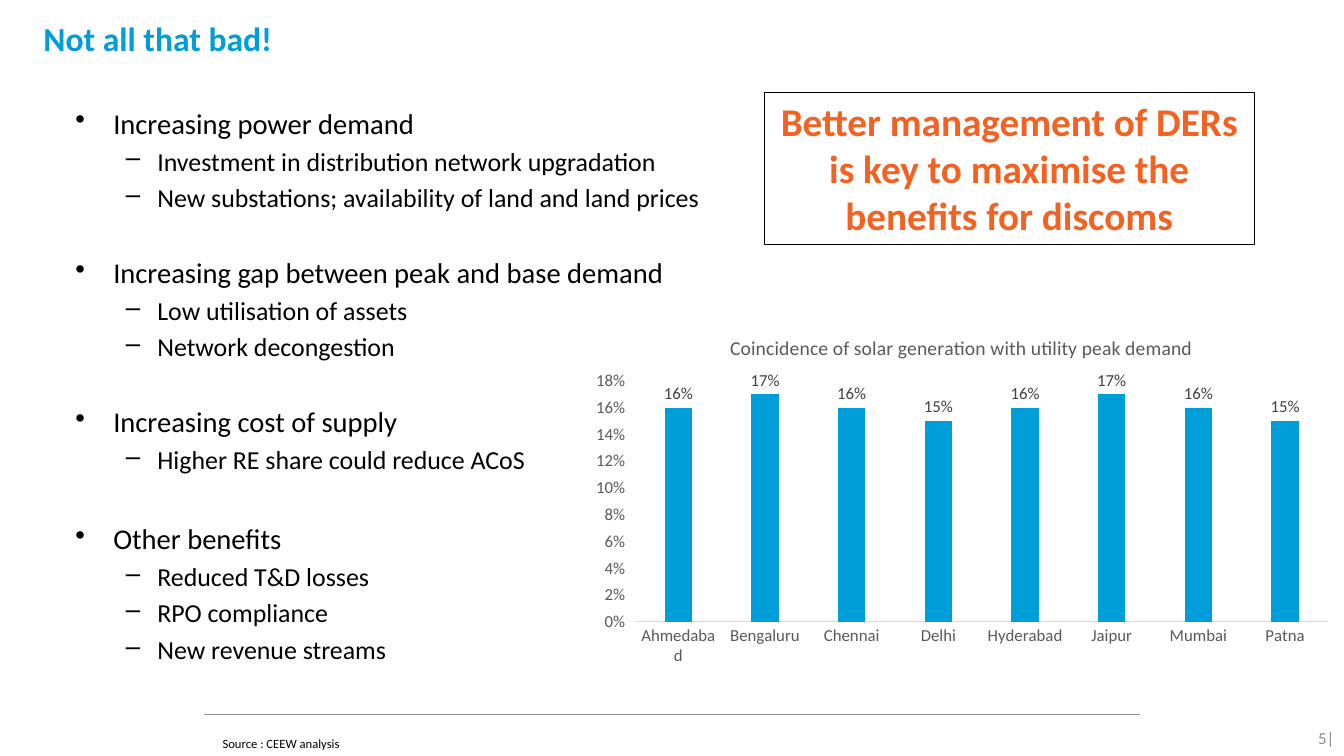
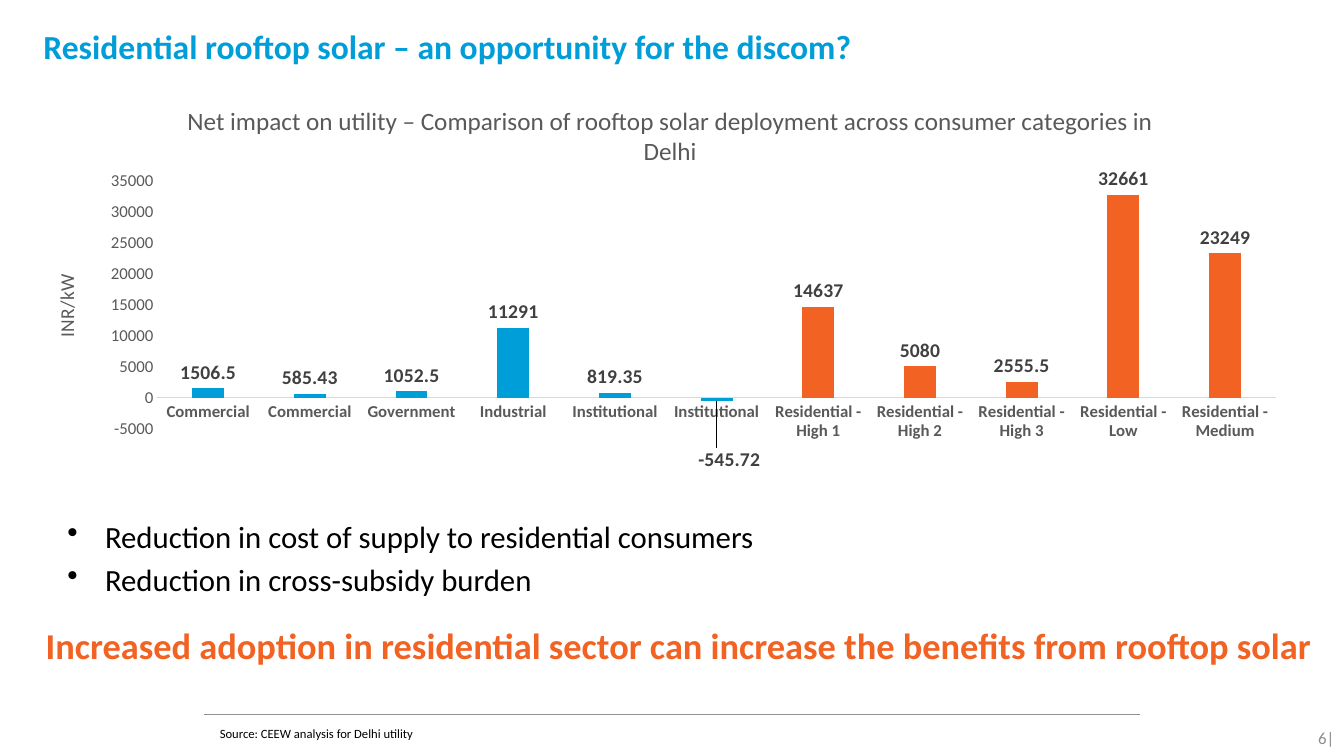
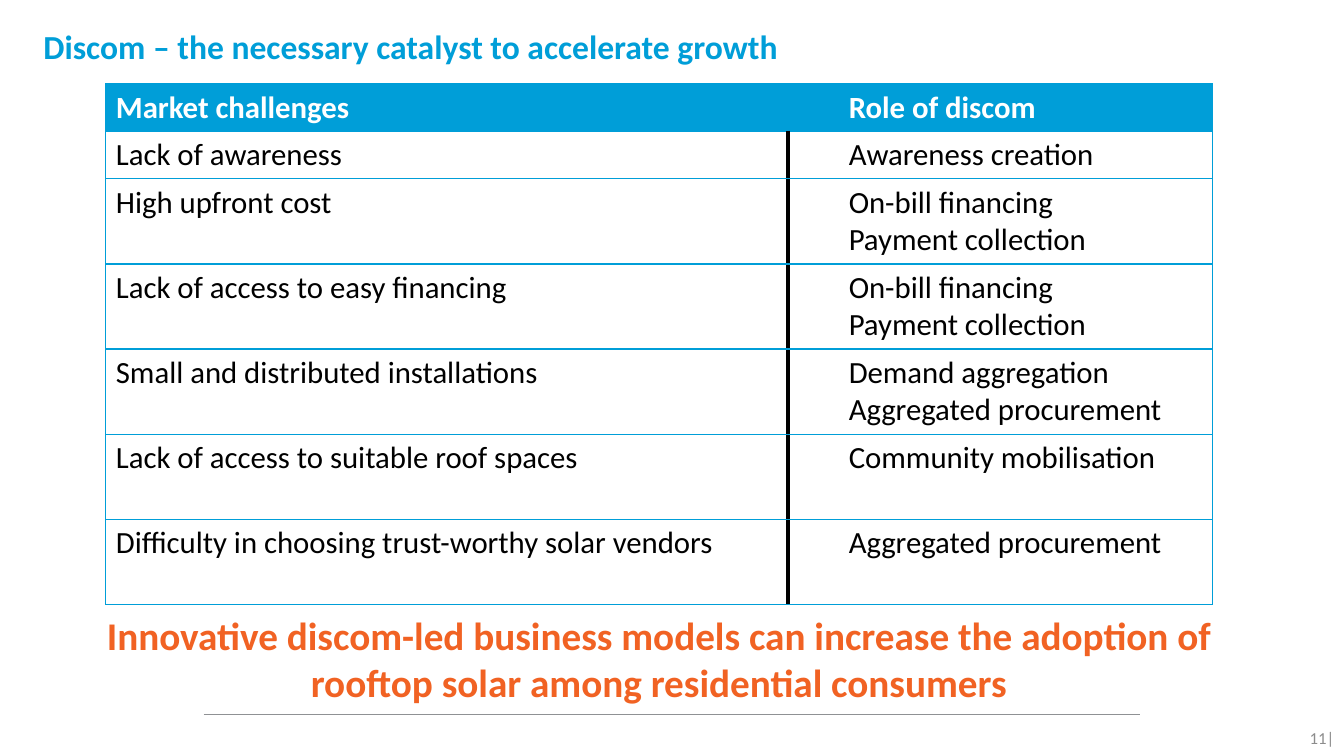
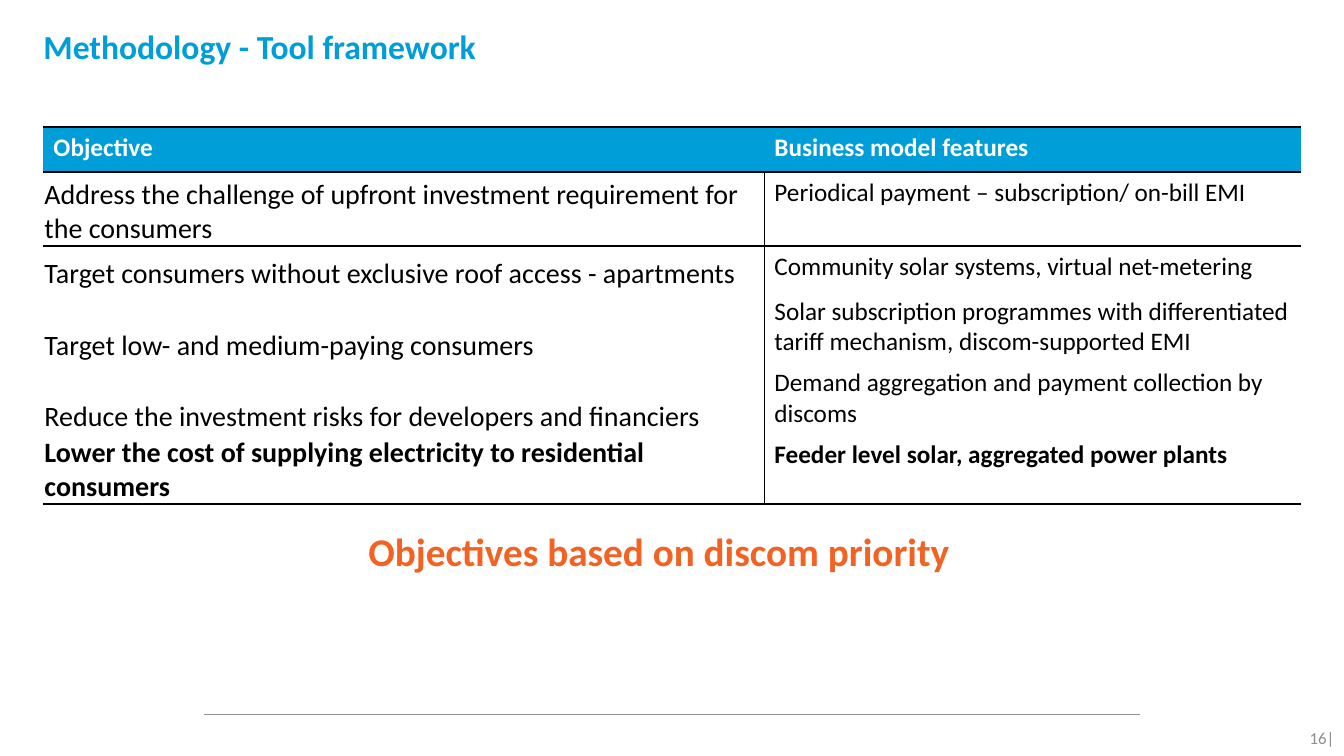
"""Build four slides on rooftop solar and the role of discoms."""
from lxml import etree
from pptx import Presentation
from pptx.chart.data import CategoryChartData
from pptx.dml.color import RGBColor
from pptx.enum.chart import XL_CHART_TYPE as ChartType
from pptx.enum.chart import XL_LABEL_POSITION as LabelPosition
from pptx.enum.chart import XL_TICK_MARK as TickMark
from pptx.enum.shapes import MSO_CONNECTOR as Connector
from pptx.enum.shapes import MSO_SHAPE as Shape
from pptx.enum.text import MSO_ANCHOR as Anchor
from pptx.enum.text import MSO_AUTO_SIZE as AutoSize
from pptx.enum.text import PP_ALIGN as Align
from pptx.oxml.ns import qn
from pptx.util import Pt

BLUE = RGBColor(0x00, 0x9E, 0xD8)
ORANGE = RGBColor(0xF1, 0x62, 0x23)
BLACK = RGBColor(0x00, 0x00, 0x00)
WHITE = RGBColor(0xFF, 0xFF, 0xFF)
RULE_GREY = RGBColor(0x8F, 0x91, 0x94)
PAGE_GREY = RGBColor(0x8C, 0x8C, 0x8C)
AXIS_GREY = RGBColor(0x59, 0x59, 0x59)
LABEL_GREY = RGBColor(0x40, 0x40, 0x40)
AXIS_LINE = RGBColor(0xD9, 0xD9, 0xD9)
FONT = "Calibri"
NO_GRID_STYLE = "{2D5ABB26-0587-4C30-8999-92F81FD0307C}"
DEFAULT_INSETS = (7.2, 3.6, 7.2, 3.6)

BENEFITS = [
    ("Increasing power demand",
     ["Investment in distribution network upgradation",
      "New substations; availability of land and land prices"]),
    ("Increasing gap between peak and base demand",
     ["Low utilisation of assets", "Network decongestion"]),
    ("Increasing cost of supply", ["Higher RE share could reduce ACoS"]),
    ("Other benefits",
     ["Reduced T&D losses", "RPO compliance", "New revenue streams"]),
]
PEAK_CHART = {
    "box": (415.5, 223.2, 544.3, 257),
    "title": "Coincidence of solar generation with utility peak demand",
    "title_size": 14, "title_at": (0.19, 0.05),
    "plot": (0.07, 0.19, 0.91, 0.67),
    "values": [("Ahmedabad", 0.16), ("Bengaluru", 0.17), ("Chennai", 0.16),
               ("Delhi", 0.15), ("Hyderabad", 0.16), ("Jaipur", 0.17),
               ("Mumbai", 0.16), ("Patna", 0.15)],
    "format": "0%", "scale": (0, 0.18, 0.02), "tick": TickMark.OUTSIDE,
    "bold": False, "label_size": 12,
}
IMPACT_CHART = {
    "box": (21.6, 56.9, 908, 280),
    "title": "Net impact on utility – Comparison of rooftop solar deployment "
             "across consumer categories in Delhi",
    "title_size": 18, "title_at": (0.12, 0.05),
    "plot": (0.1, 0.26, 0.88, 0.64),
    "values": [("Commercial", 1506.5), ("Commercial", 585.43),
               ("Government", 1052.5), ("Industrial", 11291),
               ("Institutional", 819.35), ("Institutional", -545.72),
               ("Residential - High 1", 14637), ("Residential - High 2", 5080),
               ("Residential - High 3", 2555.5), ("Residential - Low", 32661),
               ("Residential - Medium", 23249)],
    "format": "General", "scale": (-5000, 35000, 5000), "tick": TickMark.NONE,
    "bold": True, "label_size": 14, "axis_title": "INR/kW",
}
REDUCTIONS = ["Reduction in cost of supply to residential consumers",
              "Reduction in cross-subsidy burden"]
CHALLENGES = [
    ("Market challenges", ["Role of discom"]),
    ("Lack of awareness", ["Awareness creation"]),
    ("High upfront cost", ["On-bill financing", "Payment collection"]),
    ("Lack of access to easy financing",
     ["On-bill financing", "Payment collection"]),
    ("Small and distributed installations",
     ["Demand aggregation", "Aggregated procurement"]),
    ("Lack of access to suitable roof spaces", ["Community mobilisation"]),
    ("Difficulty in choosing trust-worthy solar vendors",
     ["Aggregated procurement"]),
]
OBJECTIVES = [
    ("Objective", "Business model features"),
    ("Address the challenge of upfront investment requirement for the "
     "consumers", "Periodical payment – subscription/ on-bill EMI"),
    ("Target consumers without exclusive roof access - apartments",
     "Community solar systems, virtual net-metering"),
    ("Target low- and medium-paying consumers",
     "Solar subscription programmes with differentiated tariff mechanism, "
     "discom-supported EMI"),
    ("Reduce the investment risks for developers and financiers",
     "Demand aggregation and payment collection by discoms"),
    ("Lower the cost of supplying electricity to residential consumers",
     "Feeder level solar, aggregated power plants"),
]


def style_font(font, size, color, bold=False):
    font.name, font.size, font.bold = FONT, Pt(size), bold
    font.color.rgb = color


def add_span(para, text, size, color=BLACK, bold=False):
    span = para.add_run()
    span.text = text
    style_font(span.font, size, color, bold)


def next_para(frame, first):
    return frame.paragraphs[0] if first else frame.add_paragraph()


def set_frame(frame, insets=DEFAULT_INSETS, anchor=Anchor.TOP):
    frame.word_wrap = True
    frame.auto_size = AutoSize.NONE
    frame.vertical_anchor = anchor
    (frame.margin_left, frame.margin_top,
     frame.margin_right, frame.margin_bottom) = map(Pt, insets)


def add_box(page, box, insets=DEFAULT_INSETS, anchor=Anchor.TOP):
    frame = page.shapes.add_textbox(*map(Pt, box)).text_frame
    set_frame(frame, insets, anchor)
    return frame


def add_bullet(para, mark, left, hanging):
    props = para._p.get_or_add_pPr()
    props.set("marL", str(Pt(left)))
    props.set("indent", str(-Pt(hanging)))
    etree.SubElement(props, qn("a:buChar")).set("char", mark)


def add_page(deck, title, number, top=15.1):
    page = deck.slides.add_slide(deck.slide_layouts[5])
    heading = page.shapes.title
    heading.left, heading.top, heading.width, heading.height = map(
        Pt, (31, top, 888.5, 62.6))
    set_frame(heading.text_frame, (0, 3.6, 0, 3.6))
    para = heading.text_frame.paragraphs[0]
    para.alignment = Align.LEFT
    add_span(para, title, 24, BLUE, True)

    rule = page.shapes.add_connector(
        Connector.STRAIGHT, Pt(145.5), Pt(510.5), Pt(814.3), Pt(510.5))
    rule.line.color.rgb, rule.line.width = RULE_GREY, Pt(0.75)
    etree.SubElement(rule._element.spPr, qn("a:effectLst"))

    frame = add_box(page, (899.3, 512.6, 61, 28.8), anchor=Anchor.MIDDLE)
    frame.paragraphs[0].alignment = Align.RIGHT
    add_span(frame.paragraphs[0], f"{number}|", 12, PAGE_GREY)
    return page


def add_source(page, text, left, top):
    frame = add_box(page, (left, top, 645.8, 20), (0, 3.6, 7.2, 3.6),
                    Anchor.MIDDLE)
    add_span(frame.paragraphs[0], text, 9)


def add_message(frame, text, size=28):
    frame.paragraphs[0].alignment = Align.CENTER
    add_span(frame.paragraphs[0], text, size, ORANGE, True)


def set_layout(parent, index, **parts):
    for old in parent.findall(qn("c:layout")):
        parent.remove(old)
    layout = etree.Element(qn("c:layout"))
    manual = etree.SubElement(layout, qn("c:manualLayout"))
    for name, value in parts.items():
        etree.SubElement(manual, qn(f"c:{name}")).set("val", str(value))
    parent.insert(index, layout)


def add_column_chart(page, spec):
    data = CategoryChartData(number_format=spec["format"])
    data.categories = [name for name, _ in spec["values"]]
    data.add_series("Series 1", [value for _, value in spec["values"]])
    chart = page.shapes.add_chart(
        ChartType.COLUMN_CLUSTERED, *map(Pt, spec["box"]), data).chart
    style_font(chart.font, 12, BLACK)
    chart.has_legend = False

    chart.has_title = True
    add_span(chart.chart_title.text_frame.paragraphs[0], spec["title"],
             spec["title_size"], AXIS_GREY)
    x, y = spec["title_at"]
    set_layout(chart.chart_title._element, 1,
               xMode="edge", yMode="edge", x=x, y=y)
    x, y, w, h = spec["plot"]
    set_layout(chart._chartSpace.chart.plotArea, 0, layoutTarget="inner",
               xMode="edge", yMode="edge", x=x, y=y, w=w, h=h)

    names, scale = chart.category_axis, chart.value_axis
    names.major_tick_mark = TickMark.NONE
    names.format.line.color.rgb = AXIS_LINE
    names.format.line.width = Pt(0.75)
    style_font(names.tick_labels.font, 12, AXIS_GREY, spec["bold"])
    scale.has_major_gridlines = False
    scale.major_tick_mark = spec["tick"]
    scale.format.line.fill.background()
    scale.minimum_scale, scale.maximum_scale, scale.major_unit = spec["scale"]
    scale.tick_labels.number_format = spec["format"]
    scale.tick_labels.number_format_is_linked = False
    style_font(scale.tick_labels.font, 12, AXIS_GREY)
    if "axis_title" in spec:
        add_span(scale.axis_title.text_frame.paragraphs[0],
                 spec["axis_title"], 14, AXIS_GREY)

    plot = chart.plots[0]
    plot.gap_width, plot.overlap, plot.vary_by_categories = 219, -27, False
    series = plot.series[0]
    series.invert_if_negative = False
    series.format.fill.solid()
    series.format.fill.fore_color.rgb = BLUE
    labels = series.data_labels
    labels.show_value = True
    labels.position = LabelPosition.OUTSIDE_END
    labels.number_format = spec["format"]
    labels.number_format_is_linked = False
    style_font(labels.font, spec["label_size"], LABEL_GREY, spec["bold"])

    for index, (name, value) in enumerate(spec["values"]):
        point = series.points[index]
        if name.startswith("Residential"):
            point.format.fill.solid()
            point.format.fill.fore_color.rgb = ORANGE
        if value < 0:
            label = point.data_label
            style_font(label.font, spec["label_size"], LABEL_GREY,
                       spec["bold"])
            label.position = LabelPosition.OUTSIDE_END
            set_layout(labels._element.find(qn("c:dLbl")), 1, x=0.01, y=0.11)


def add_plain_table(page, left, top, widths, heights):
    table = page.shapes.add_table(
        len(heights), len(widths), Pt(left), Pt(top),
        Pt(sum(widths)), Pt(sum(heights))).table
    table.first_row = table.horz_banding = False
    table._tbl.tblPr.find(qn("a:tableStyleId")).text = NO_GRID_STYLE
    for column, width in zip(table.columns, widths):
        column.width = Pt(width)
    for row, height in zip(table.rows, heights):
        row.height = Pt(height)
    return table


def style_cell(cell, fill, borders):
    props = cell._tc.get_or_add_tcPr()
    for side in "LRTB":
        if side in borders:
            color, width = borders[side]
            line = etree.SubElement(props, qn(f"a:ln{side}"), w=str(Pt(width)))
            solid = etree.SubElement(line, qn("a:solidFill"))
            etree.SubElement(solid, qn("a:srgbClr"), val=str(color))
    cell.fill.solid()
    cell.fill.fore_color.rgb = fill


def build_benefits(deck):
    page = add_page(deck, "Not all that bad!", 5, top=9.4)
    add_source(page, "Source : CEEW analysis", 159, 521.3)
    frame = add_box(page, (46.8, 72, 507.6, 403.2))
    for index, (topic, details) in enumerate(BENEFITS):
        para = next_para(frame, index == 0)
        add_bullet(para, "•", 27, 27)
        if index:
            para.space_before = Pt(33 if index == len(BENEFITS) - 1 else 30.3)
        add_span(para, topic, 20.4)
        for detail in details:
            para = frame.add_paragraph()
            para.level = 1
            add_bullet(para, "–", 58.5, 22.5)
            para.space_before = Pt(3.7)
            add_span(para, detail, 18.5)
    callout = page.shapes.add_shape(
        Shape.RECTANGLE, *map(Pt, (545.8, 66.2, 350, 108.7)))
    callout.shadow.inherit = False
    callout.fill.background()
    callout.line.color.rgb, callout.line.width = BLACK, Pt(0.75)
    set_frame(callout.text_frame)
    add_message(callout.text_frame, "Better management of DERs is key to "
                "maximise the benefits for discoms")
    add_column_chart(page, PEAK_CHART)


def build_impact(deck):
    page = add_page(
        deck, "Residential rooftop solar – an opportunity for the discom?", 6)
    add_source(page, "Source: CEEW analysis for Delhi utility", 157, 514)
    frame = add_box(page, (41, 366.5, 888.5, 68.4))
    for index, text in enumerate(REDUCTIONS):
        para = next_para(frame, index == 0)
        add_bullet(para, "•", 27, 27)
        if index:
            para.space_before = Pt(4.4)
        add_span(para, text, 22)
    add_message(add_box(page, (21.6, 441.4, 927.4, 38.9)),
                "Increased adoption in residential sector can increase the "
                "benefits from rooftop solar", 26)
    add_column_chart(page, IMPACT_CHART)


def build_challenges(deck):
    page = add_page(
        deck, "Discom – the necessary catalyst to accelerate growth", 11)
    heights = [33.5] * 2 + [60.8] * (len(CHALLENGES) - 2)
    table = add_plain_table(page, 75.6, 59.8, (487.5, 303), heights)
    thin, thick = (BLUE, 1), (BLACK, 3)
    for row, (challenge, roles) in enumerate(CHALLENGES):
        header = row == 0
        color, fill = (WHITE, BLUE) if header else (BLACK, WHITE)
        divider = thin if header else thick
        left, right = table.cell(row, 0), table.cell(row, 1)
        style_cell(left, fill, {"L": thin, "R": divider, "T": thin, "B": thin})
        style_cell(right, fill,
                   {"L": divider, "R": thin, "T": thin, "B": thin})
        add_span(left.text_frame.paragraphs[0], challenge, 22, color, header)
        for index, role in enumerate(roles):
            para = next_para(right.text_frame, index == 0)
            para._p.get_or_add_pPr().set("marL", str(Pt(36)))
            add_span(para, role, 22, color, header)
    add_message(add_box(page, (31, 433.4, 879, 75)),
                "Innovative discom-led business models can increase the "
                "adoption of rooftop solar among residential consumers")


def build_framework(deck):
    page = add_page(deck, "Methodology - Tool framework", 16)
    table = add_plain_table(page, 31, 90.9, (515, 383),
                            (32, 53, 32, 51, 51, 50))
    thin, thick = (BLACK, 1), (BLACK, 2)
    last = len(OBJECTIVES) - 1
    for row, texts in enumerate(OBJECTIVES):
        header = row == 0
        for column, text in enumerate(texts):
            cell = table.cell(row, column)
            borders = {} if header else {"LR"[1 - column]: thin}
            if header:
                borders["T"] = thick
            if row in (0, last):
                borders["B"] = thick
            if row == 1:
                borders["T"] = thick
            style_cell(cell, BLUE if header else WHITE, borders)
            objective = column == 0 and not header
            if objective:
                cell.vertical_anchor = Anchor.BOTTOM
                cell.margin_left = cell.margin_right = Pt(0.75)
                cell.margin_top, cell.margin_bottom = Pt(0.75), Pt(0)
            add_span(cell.text_frame.paragraphs[0], text,
                     20 if objective else 18, WHITE if header else BLACK,
                     row in (0, last))
    add_message(add_box(page, (31, 373, 879, 41)),
                "Objectives based on discom priority")


def main():
    deck = Presentation()
    deck.slide_width, deck.slide_height = Pt(960), Pt(540)
    for build in (build_benefits, build_impact, build_challenges,
                  build_framework):
        build(deck)
    deck.save("out.pptx")


if __name__ == "__main__":
    main()
